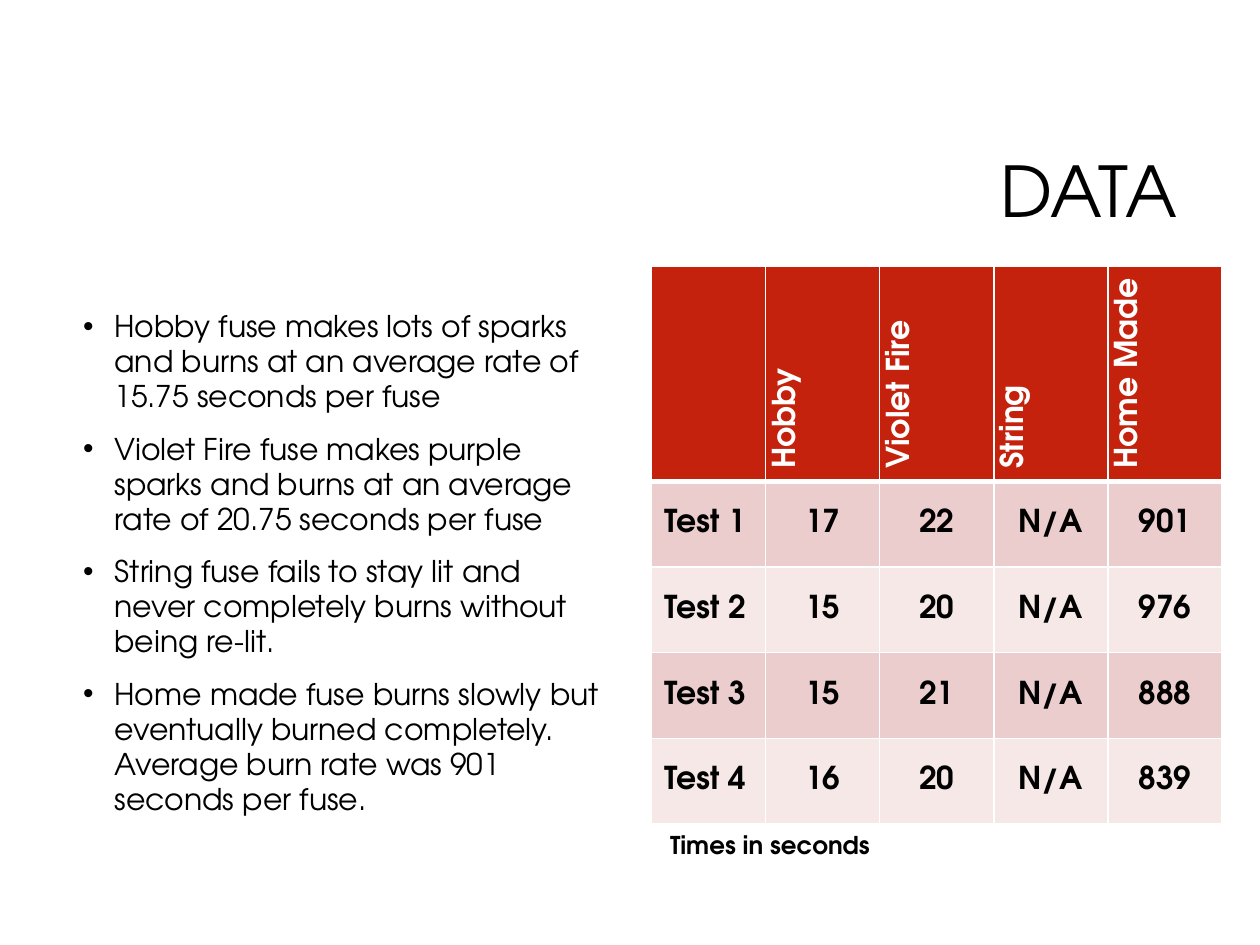
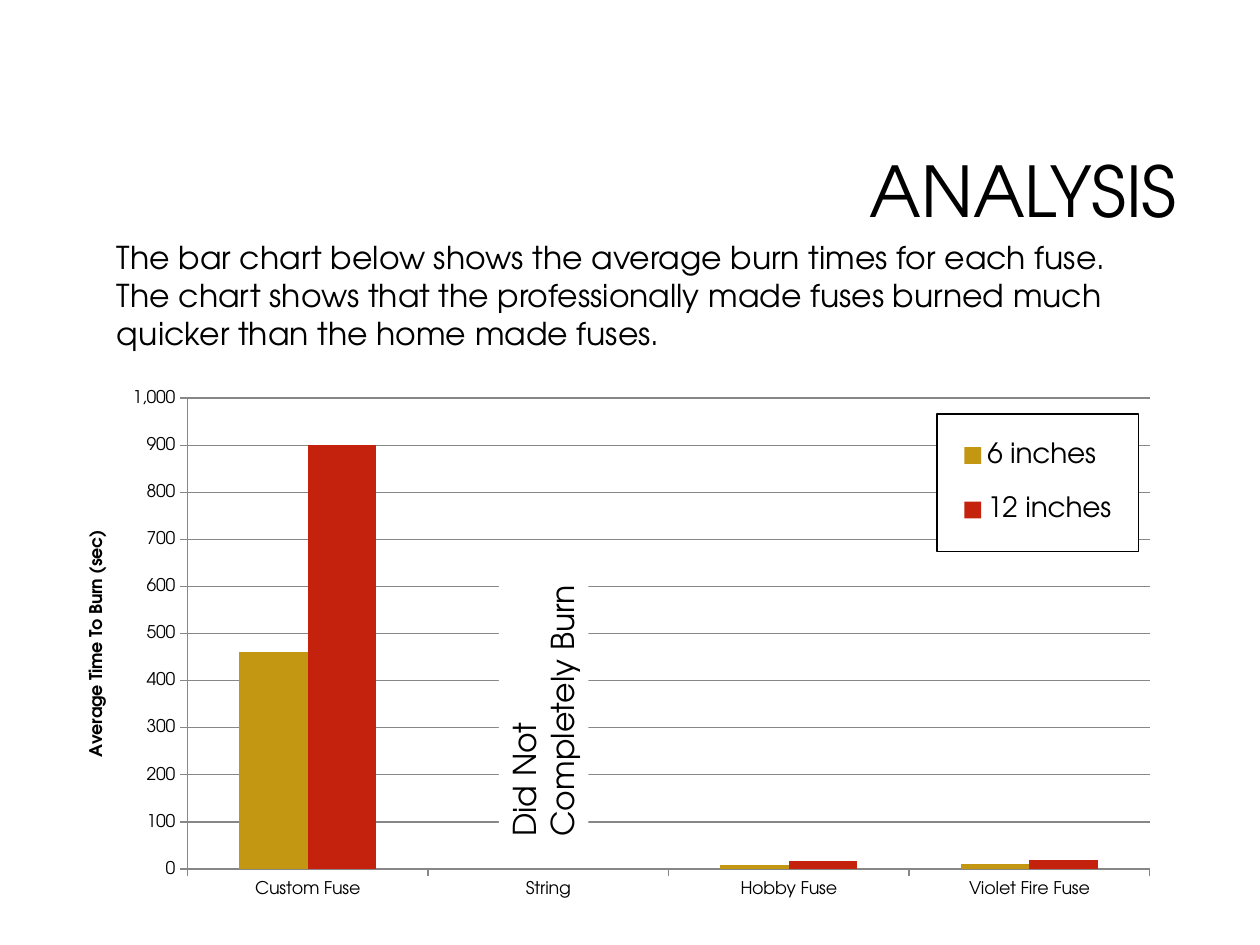
from lxml import etree
from pptx import Presentation
from pptx import util as u
from pptx.chart import data
from pptx.dml import color
from pptx.enum import chart as charts, shapes, text
from pptx.oxml import ns

FONT = "TeX Gyre Adventor"
COLORS = {"black": "000000", "white": "FFFFFF", "red": "C4220D", "gold": "C49712",
          "band_dark": "EACDCC", "band_light": "F5E8E7", "grid": "878787"}
TITLE_BOX = (2.38, 0.84, 7.06, 1.41)


def rgb(name):
    return color.RGBColor.from_string(COLORS[name])


def inches(box):
    return [u.Inches(length) for length in box]


def style_font(font, size, ink="black", bold=False):
    font.name, font.size, font.bold = FONT, u.Pt(size), bold
    font.color.rgb = rgb(ink)


def add_span(para, words, size, ink="black", bold=False):
    span = para.add_run()
    span.text = words
    style_font(span.font, size, ink, bold)


def place(shape, box):
    shape.left, shape.top, shape.width, shape.height = inches(box)


def add_paragraphs(frame, lines, size, bold=False):
    """Fill a frame with one paragraph per line and return them."""
    for number, line in enumerate(lines):
        para = frame.paragraphs[0] if number == 0 else frame.add_paragraph()
        para.alignment = text.PP_ALIGN.LEFT
        add_span(para, line, size, bold=bold)
    return frame.paragraphs


def add_page(deck, layout, title):
    page = deck.slides.add_slide(deck.slide_layouts[layout])
    place(page.shapes.title, TITLE_BOX)
    frame = page.shapes.title.text_frame
    frame.vertical_anchor = text.MSO_ANCHOR.MIDDLE
    frame.auto_size = text.MSO_AUTO_SIZE.NONE
    para = frame.paragraphs[0]
    para.alignment = text.PP_ALIGN.RIGHT
    para.line_spacing = 0.9
    add_span(para, title, 40)
    return page


def add_bullets(page, box, lines):
    body = page.placeholders[1]
    place(body, box)
    body.text_frame.auto_size = text.MSO_AUTO_SIZE.NONE
    for para in add_paragraphs(body.text_frame, lines, 17.1):
        para.line_spacing, para.space_before, para.space_after = u.Pt(20), u.Pt(0), u.Pt(10)
        settings = para._p.get_or_add_pPr()
        settings.set("marL", str(u.Inches(0.25)))
        settings.set("indent", str(-u.Inches(0.25)))
        etree.SubElement(settings, ns.qn("a:buChar"), char="•")


def add_text(page, box, lines, size, bold=False):
    note = page.shapes.add_textbox(*inches(box))
    note.text_frame.word_wrap = False
    add_paragraphs(note.text_frame, lines, size, bold)


def border_cell(cell, bottom):
    settings = cell._tc.get_or_add_tcPr()
    for side, width in (("L", 1), ("R", 1), ("T", 1), ("B", bottom)):
        line = etree.SubElement(settings, ns.qn(f"a:ln{side}"), w=str(u.Pt(width)))
        fill = etree.SubElement(line, ns.qn("a:solidFill"))
        etree.SubElement(fill, ns.qn("a:srgbClr"), val=COLORS["white"])


def add_times_table(page, box, rows, header_height):
    table = page.shapes.add_table(len(rows), len(rows[0]), *inches(box)).table
    row_height = (box[3] - header_height) / (len(rows) - 1)
    for column in table.columns:
        column.width = u.Inches(box[2] / len(rows[0]))
    for r, values in enumerate(rows):
        header = r == 0
        table.rows[r].height = u.Inches(header_height if header else row_height)
        for c, value in enumerate(values):
            cell = table.cell(r, c)
            border_cell(cell, 3 if header else 1)
            cell.fill.solid()
            cell.fill.fore_color.rgb = rgb(
                "red" if header else "band_dark" if r % 2 else "band_light")
            cell.vertical_anchor = text.MSO_ANCHOR.MIDDLE
            para = cell.text_frame.paragraphs[0]
            if value:
                add_span(para, value, 18, "white" if header else "black", True)
            if header and value:
                cell._tc.get_or_add_tcPr().set("vert", "vert270")
            elif c > 0:
                para.alignment = text.PP_ALIGN.CENTER


def make_layout(box, inner=False):
    """Manual chart layout from fractions of the chart area."""
    layout = etree.Element(ns.qn("c:layout"))
    manual = etree.SubElement(layout, ns.qn("c:manualLayout"))
    settings = [("layoutTarget", "inner")] if inner else []
    settings += [("xMode", "edge"), ("yMode", "edge")]
    settings += zip("xywh", map(str, box))
    for tag, value in settings:
        etree.SubElement(manual, ns.qn(f"c:{tag}"), val=value)
    return layout


def style_legend(chart, box):
    chart.has_legend = True
    chart.legend.position = charts.XL_LEGEND_POSITION.RIGHT
    chart.legend.include_in_layout = False
    style_font(chart.legend.font, 16)
    legend = next(chart.element.iter(ns.qn("c:legend")))
    legend.find(ns.qn("c:legendPos")).addnext(make_layout(box))
    # White panel with a thin black outline
    panel = etree.Element(ns.qn("c:spPr"))
    outline = etree.Element(ns.qn("a:ln"), w=str(u.Pt(0.75)))
    for parent, ink in ((panel, "white"), (outline, "black")):
        fill = etree.SubElement(parent, ns.qn("a:solidFill"))
        etree.SubElement(fill, ns.qn("a:srgbClr"), val=COLORS[ink])
    panel.append(outline)
    legend.find(ns.qn("c:txPr")).addprevious(panel)


def style_axes(chart):
    values, fuses = chart.value_axis, chart.category_axis
    values.minimum_scale, values.maximum_scale, values.major_unit = 0, 1000, 100
    values.has_major_gridlines = True
    values.tick_labels.number_format = "#,##0"
    values.tick_labels.number_format_is_linked = False
    for axis in (values, fuses):
        axis.major_tick_mark = charts.XL_TICK_MARK.OUTSIDE
        axis.minor_tick_mark = charts.XL_TICK_MARK.NONE
    for line in (values.format.line, fuses.format.line, values.major_gridlines.format.line):
        line.color.rgb, line.width = rgb("grid"), u.Pt(0.75)
    para = values.axis_title.text_frame.paragraphs[0]
    add_span(para, "Average Time To Burn (sec)", 10, bold=True)


def add_burn_chart(page, box):
    burns = data.CategoryChartData()
    burns.categories = ["Custom Fuse", "String", "Hobby Fuse", "Violet Fire Fuse"]
    burns.add_series("6 inches", (460, None, 8, 10))
    burns.add_series("12 inches", (900, None, 16, 20))
    chart = page.shapes.add_chart(
        charts.XL_CHART_TYPE.COLUMN_CLUSTERED, *inches(box), burns).chart
    chart.has_title = False
    style_font(chart.font, 10)
    plot = chart.plots[0]
    plot.vary_by_categories, plot.gap_width, plot.overlap = False, 150, 0
    for series, ink in zip(plot.series, ("gold", "red")):
        series.format.fill.solid()
        series.format.fill.fore_color.rgb = rgb(ink)
    style_axes(chart)
    style_legend(chart, (0.77, 0.08, 0.18, 0.26))
    area = next(chart.element.iter(ns.qn("c:plotArea")))
    for layout in area.findall(ns.qn("c:layout")):
        area.remove(layout)
    area.insert(0, make_layout((0.1, 0.05, 0.86, 0.89), inner=True))


def add_turned_label(page, box, lines):
    label = page.shapes.add_shape(shapes.MSO_SHAPE.RECTANGLE, *inches(box))
    label.rotation = 270
    label.shadow.inherit = False
    label.fill.solid()
    label.fill.fore_color.rgb = rgb("white")
    label.line.fill.background()
    label.text_frame.word_wrap = False
    label.text_frame.vertical_anchor = text.MSO_ANCHOR.TOP
    add_paragraphs(label.text_frame, lines, 18)


def build_data_page(deck):
    page = add_page(deck, 1, "DATA")
    add_bullets(page, (0.56, 2.4, 4.35, 4.4), [
        "Hobby fuse makes lots of sparks and burns at an average rate of 15.75 seconds per fuse",
        "Violet Fire fuse makes purple sparks and burns at an average rate of "
        "20.75 seconds per fuse",
        "String fuse fails to stay lit and never completely burns without being re-lit.",
        "Home made fuse burns slowly but eventually burned completely. "
        "Average burn rate was 901 seconds per fuse."])
    add_times_table(page, (5.17, 2.11, 4.53, 4.43), [
        ("", "Hobby", "Violet Fire", "String", "Home Made"),
        ("Test 1", "17", "22", "N/A", "901"),
        ("Test 2", "15", "20", "N/A", "976"),
        ("Test 3", "15", "21", "N/A", "888"),
        ("Test 4", "16", "20", "N/A", "839")], header_height=1.71)
    add_text(page, (5.22, 6.54, 1.8, 0.34), ["Times in seconds"], 14, bold=True)


def build_analysis_page(deck):
    page = add_page(deck, 5, "ANALYSIS")
    add_burn_chart(page, (0.6, 2.95, 8.88, 4.2))
    add_text(page, (0.83, 1.84, 8.29, 1.01), [
        "The bar chart below shows the average burn times for each fuse.",
        "The chart shows that the professionally made fuses burned much",
        "quicker than the home made fuses."], 18)
    add_turned_label(page, (3.2, 5.27, 2.23, 0.71), ["Did Not", "Completely Burn"])


def main():
    deck = Presentation()
    deck.slide_width, deck.slide_height = u.Inches(10), u.Inches(7.5)
    build_data_page(deck)
    build_analysis_page(deck)
    deck.save("out.pptx")


if __name__ == "__main__":
    main()
